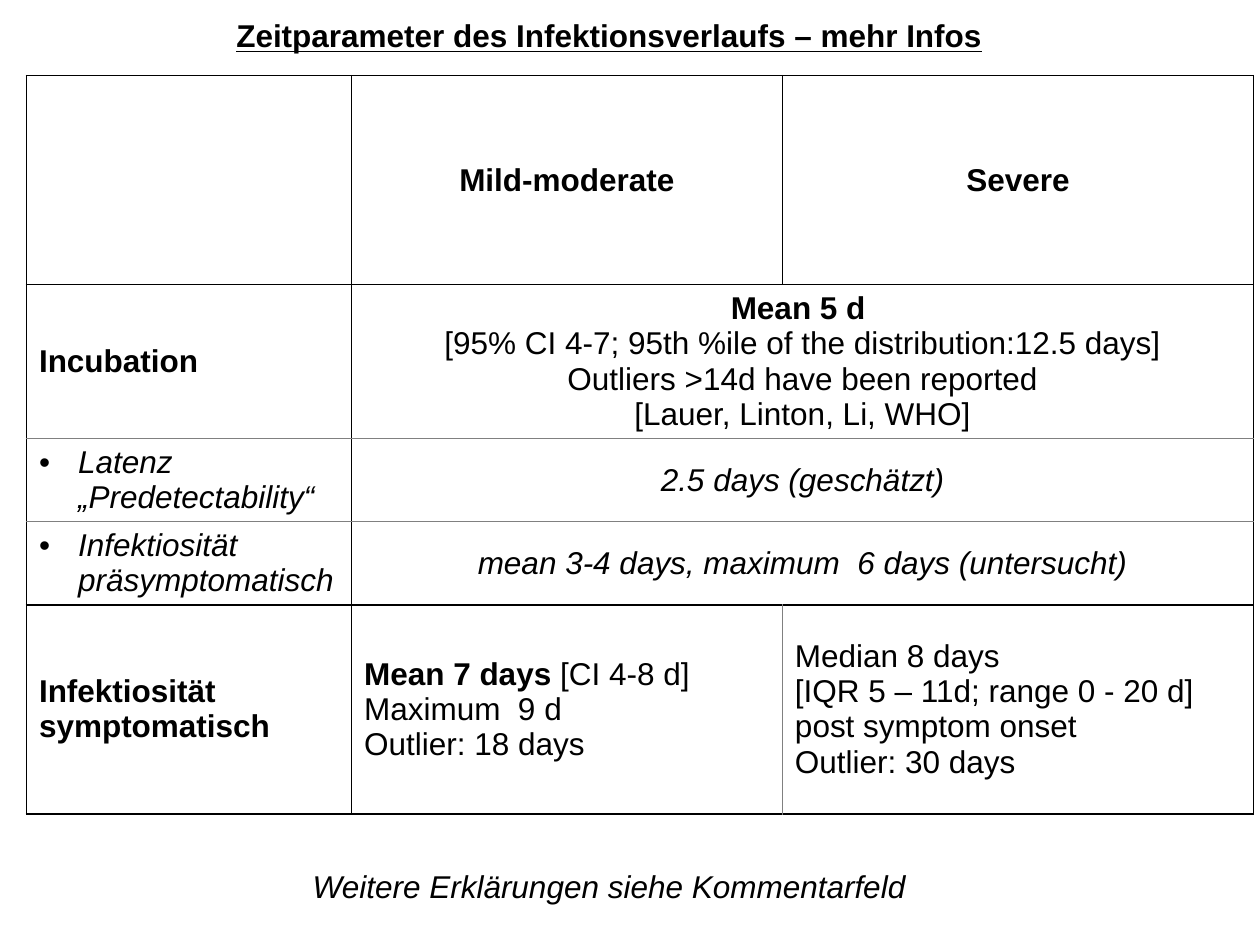
from dataclasses import dataclass

import pptx
import pptx.dml.color
import pptx.enum.text
import pptx.oxml
import pptx.oxml.ns
import pptx.util
from pptx.util import Inches

BLACK, GRAY = "000000", "808080"
CENTER = pptx.enum.text.PP_ALIGN.CENTER
LEFT = pptx.enum.text.PP_ALIGN.LEFT
MIDDLE = pptx.enum.text.MSO_ANCHOR.MIDDLE
COLUMN_WIDTHS = (2.58, 3.42, 3.74)
ROW_HEIGHTS = (1.66, 1.17, 0.57, 0.49, 1.66)
# Colours of the horizontal rules, from the top edge to the bottom edge
RULE_COLORS = (BLACK, BLACK, GRAY, GRAY, BLACK, BLACK)


@dataclass
class Run:
    text: str
    bold: bool = False
    italic: bool = False
    underline: bool = False


@dataclass
class CellText:
    row: int
    column: int
    paragraphs: list[list[Run]]
    centered: bool = False
    bullet: bool = False
    span: int = 1


CELLS = [
    CellText(0, 1, [[Run("Mild-moderate", bold=True)]], centered=True),
    CellText(0, 2, [[Run("Severe", bold=True)]], centered=True),
    CellText(1, 0, [[Run("Incubation", bold=True)]]),
    CellText(1, 1, [
        [Run("Mean 5 d ", bold=True)],
        [Run("[95% CI 4-7; 95th %ile of the distribution:12.5 days]")],
        [Run("Outliers >14d have been reported\n[Lauer, Linton, Li, WHO]")],
    ], centered=True, span=2),
    CellText(2, 0, [[Run("Latenz „Predetectability“", italic=True)]], bullet=True),
    CellText(2, 1, [[Run("2.5 days (geschätzt)", italic=True)]], centered=True, span=2),
    CellText(3, 0, [[Run("Infektiosität präsymptomatisch", italic=True)]], bullet=True),
    CellText(3, 1, [[Run("mean 3-4 days, maximum  6 days (untersucht)", italic=True)]],
             centered=True, span=2),
    CellText(4, 0, [[Run("Infektiosität", bold=True)], [Run("symptomatisch", bold=True)]]),
    CellText(4, 1, [
        [Run("Mean 7 days ", bold=True), Run("[CI 4-8 d] Maximum  9 d")],
        [Run("Outlier: 18 days")],
    ]),
    CellText(4, 2, [
        [Run("Median 8 days")],
        [Run("[IQR 5 – 11d; range 0 - 20 d] post symptom onset")],
        [Run("Outlier: 30 days")],
    ]),
]


def color(value: str) -> pptx.dml.color.RGBColor:
    return pptx.dml.color.RGBColor.from_string(value)


def format_font(font, run: Run) -> None:
    font.name = "Arial"
    font.size = pptx.util.Pt(18)
    font.color.rgb = color(BLACK)
    font.bold, font.italic, font.underline = run.bold, run.italic, run.underline


def write_paragraph(paragraph, runs: list[Run], alignment) -> None:
    paragraph.alignment = alignment
    for run in runs:
        for index, line in enumerate(run.text.split("\n")):
            if index:
                paragraph.add_line_break()
            text_run = paragraph.add_run()
            text_run.text = line
            format_font(text_run.font, run)


def add_bullet(paragraph) -> None:
    properties = paragraph._p.get_or_add_pPr()
    properties.set("marL", str(Inches(0.31)))
    properties.set("indent", str(-Inches(0.31)))
    namespace = pptx.oxml.ns.nsdecls("a")
    properties.append(pptx.oxml.parse_xml(f'<a:buFont {namespace} typeface="Arial"/>'))
    properties.append(pptx.oxml.parse_xml(f'<a:buChar {namespace} char="•"/>'))


def set_borders(cell, row: int, column: int) -> None:
    last = len(ROW_HEIGHTS) - 1
    sides = {
        "lnL": GRAY if (row, column) == (last, 2) else BLACK,
        "lnR": GRAY if (row, column) == (last, 1) else BLACK,
        "lnT": RULE_COLORS[row],
        "lnB": RULE_COLORS[row + 1],
    }
    properties = cell._tc.get_or_add_tcPr()
    for side, value in sides.items():
        properties.append(pptx.oxml.parse_xml(
            f'<a:{side} {pptx.oxml.ns.nsdecls("a")} w="{pptx.util.Pt(1)}">'
            f'<a:solidFill><a:srgbClr val="{value}"/></a:solidFill></a:{side}>'))


def fill_cell(table, content: CellText) -> None:
    cell = table.cell(content.row, content.column)
    if content.span > 1:
        cell.merge(table.cell(content.row, content.column + content.span - 1))
    frame = cell.text_frame
    for index, runs in enumerate(content.paragraphs):
        paragraph = frame.add_paragraph() if index else frame.paragraphs[0]
        write_paragraph(paragraph, runs, CENTER if content.centered else LEFT)
        if content.bullet:
            add_bullet(paragraph)


def add_parameter_table(slide) -> None:
    shape = slide.shapes.add_table(
        len(ROW_HEIGHTS), len(COLUMN_WIDTHS), Inches(0.21), Inches(0.6),
        Inches(sum(COLUMN_WIDTHS)), Inches(sum(ROW_HEIGHTS)))
    table = shape.table
    table.first_row = table.horz_banding = False
    for column, width in zip(table.columns, COLUMN_WIDTHS):
        column.width = Inches(width)
    for row, height in zip(table.rows, ROW_HEIGHTS):
        row.height = Inches(height)
    for row in range(len(ROW_HEIGHTS)):
        for column in range(len(COLUMN_WIDTHS)):
            cell = table.cell(row, column)
            set_borders(cell, row, column)
            cell.fill.background()
            cell.vertical_anchor = MIDDLE
    for content in CELLS:
        fill_cell(table, content)


def write_line(shape, top: float, run: Run) -> None:
    shape.left, shape.top = Inches(0.17), Inches(top)
    shape.width, shape.height = Inches(9.33), Inches(0.42)
    frame = shape.text_frame
    frame.word_wrap = True
    frame.auto_size = pptx.enum.text.MSO_AUTO_SIZE.NONE
    frame.vertical_anchor = pptx.enum.text.MSO_ANCHOR.TOP
    write_paragraph(frame.paragraphs[0], [run], CENTER)


def main() -> None:
    presentation = pptx.Presentation()
    presentation.slide_width, presentation.slide_height = Inches(10), Inches(7.5)
    slide = presentation.slides.add_slide(presentation.slide_layouts[5])

    # Title
    write_line(slide.shapes.title, 0.08,
               Run("Zeitparameter des Infektionsverlaufs – mehr Infos", bold=True, underline=True))

    # Table of time parameters
    add_parameter_table(slide)

    # Closing remark
    remark = slide.shapes.add_textbox(0, 0, 0, 0)
    write_line(remark, 6.83, Run("Weitere Erklärungen siehe Kommentarfeld", italic=True))

    presentation.save("out.pptx")


if __name__ == "__main__":
    main()
